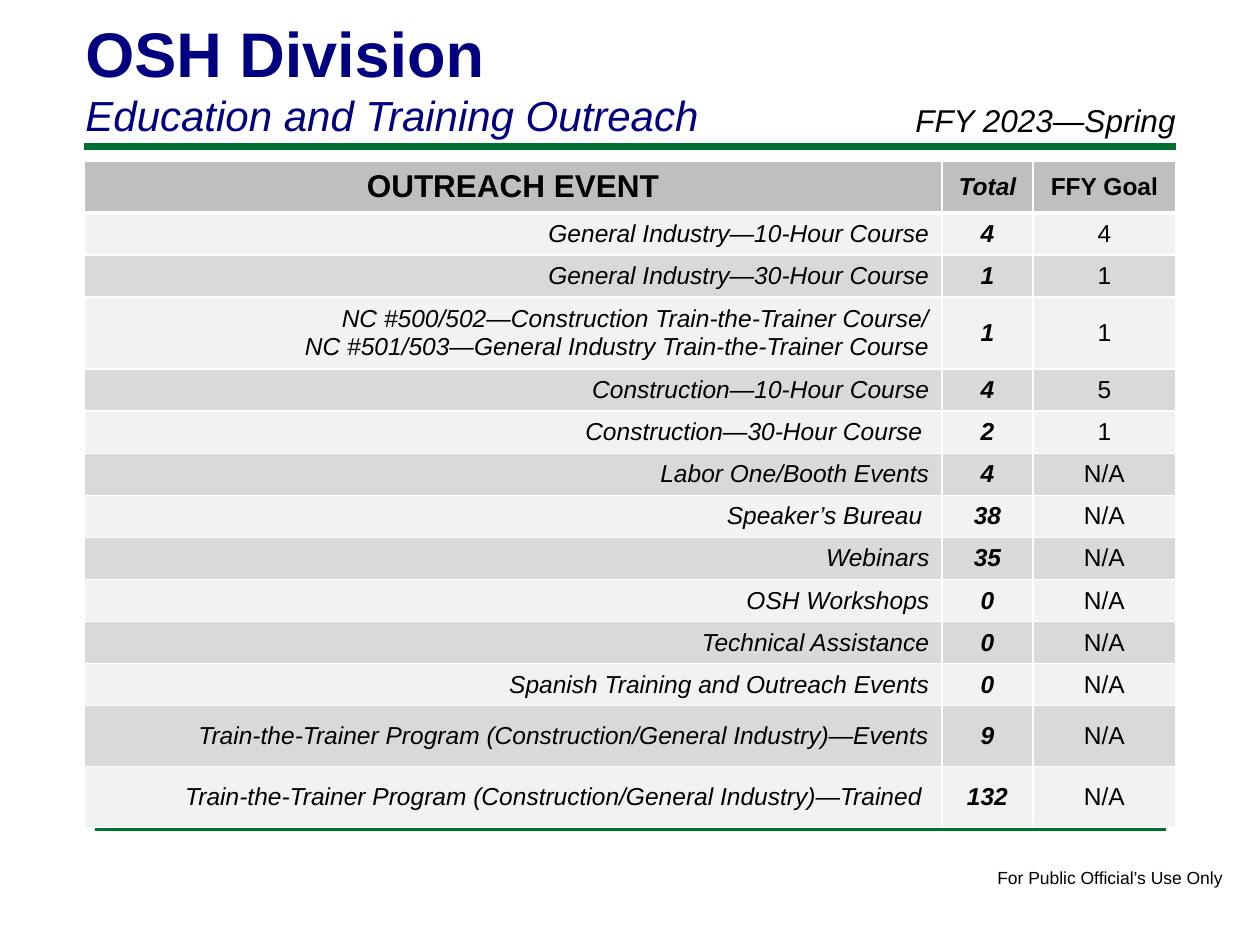
from pptx import Presentation
from pptx.dml.color import RGBColor
from pptx.enum.shapes import MSO_CONNECTOR as Connector
from pptx.enum.text import MSO_ANCHOR as Anchor, MSO_AUTO_SIZE as AutoSize, PP_ALIGN as Align
from pptx.oxml import parse_xml
from pptx.oxml.ns import nsdecls
from pptx.util import Emu, Pt

GREEN = RGBColor(0x00, 0x70, 0x30)
NAVY = RGBColor(0x00, 0x00, 0x80)
BLACK = RGBColor(0x00, 0x00, 0x00)
WHITE = RGBColor(0xFF, 0xFF, 0xFF)
HEADER_GRAY = RGBColor(0xBF, 0xBF, 0xBF)
BANDS = (RGBColor(0xF2, 0xF2, 0xF2), RGBColor(0xD9, 0xD9, 0xD9))

# Content: lines of text with their formats
TITLE = [
    ("OSH Division", dict(size=Pt(36), bold=True, color=NAVY)),
    ("Education and Training Outreach", dict(size=Pt(24), italic=True, color=NAVY)),
]
PERIOD = [("FFY 2023—Spring", dict(size=Pt(18), italic=True))]
FOOTER = [("For Public Official’s Use Only", dict(size=Pt(10)))]

HEADER = ("OUTREACH EVENT", "Total", "FFY Goal")
EVENTS = [
    ("General Industry—10-Hour Course", "4", "4"),
    ("General Industry—30-Hour Course", "1", "1"),
    ("NC #500/502—Construction Train-the-Trainer Course/\n"
     "NC #501/503—General Industry Train-the-Trainer Course", "1", "1"),
    ("Construction—10-Hour Course", "4", "5"),
    ("Construction—30-Hour Course ", "2", "1"),
    ("Labor One/Booth Events", "4", "N/A"),
    ("Speaker’s Bureau ", "38", "N/A"),
    ("Webinars", "35", "N/A"),
    ("OSH Workshops", "0", "N/A"),
    ("Technical Assistance", "0", "N/A"),
    ("Spanish Training and Outreach Events", "0", "N/A"),
    ("Train-the-Trainer Program (Construction/General Industry)—Events", "9", "N/A"),
    ("Train-the-Trainer Program (Construction/General Industry)—Trained ", "132", "N/A"),
]

# Formats by table column
HEADER_FORMATS = (
    dict(size=Pt(18), bold=True),
    dict(size=Pt(14), bold=True, italic=True),
    dict(size=Pt(14), bold=True),
)
BODY_FORMATS = (
    dict(size=Pt(14), italic=True),
    dict(size=Pt(14), bold=True, italic=True),
    dict(size=Pt(14)),
)
BODY_ALIGNS = (Align.RIGHT, Align.CENTER, Align.CENTER)

# Geometry in px
TABLE_LEFT, TABLE_TOP = 84, 161
COLUMN_WIDTHS = (858, 91, 143)
HEADER_HEIGHT, ROW_HEIGHT, TWO_LINE_HEIGHT, LAST_HEIGHT = 52, 42, 72, 61
RULES = [(84, 1176, 147, 4), (95, 1166, 829, 2)]


def px(length):
    return Emu(round(length * 914400 / 126))


def write(frame, lines, align=Align.LEFT):
    for index, (text, formats) in enumerate(lines):
        para = frame.paragraphs[0] if index == 0 else frame.add_paragraph()
        para.alignment = align
        span = para.add_run()
        span.text = text
        values = dict(name="Arial", bold=False, italic=False, color=BLACK) | formats
        span.font.color.rgb = values.pop("color")
        for name, value in values.items():
            setattr(span.font, name, value)


def add_text(page, place, lines, wrap=True):
    box = page.shapes.add_textbox(*map(px, place))
    box.text_frame.word_wrap = wrap
    box.text_frame.auto_size = AutoSize.SHAPE_TO_FIT_TEXT
    write(box.text_frame, lines)


def add_rule(page, left, right, y, weight):
    rule = page.shapes.add_connector(Connector.STRAIGHT, px(left), px(y), px(right), px(y))
    rule.line.color.rgb = GREEN
    rule.line.width = Pt(weight)
    rule._element.spPr.append(parse_xml(f"<a:effectLst {nsdecls('a')}/>"))


def set_borders(cell, top, bottom):
    properties = cell._tc.get_or_add_tcPr()
    for index, (side, weight) in enumerate(zip("LRTB", (1, 1, top, bottom))):
        properties.insert(index, parse_xml(
            f'<a:ln{side} {nsdecls("a")} w="{Pt(weight)}"><a:solidFill>'
            f'<a:srgbClr val="{WHITE}"/></a:solidFill></a:ln{side}>'))


def row_height(row):
    if row == 0:
        return HEADER_HEIGHT
    if row > len(EVENTS) - 2:
        return LAST_HEIGHT
    return TWO_LINE_HEIGHT if "\n" in EVENTS[row - 1][0] else ROW_HEIGHT


def add_event_table(page):
    rows = [HEADER, *EVENTS]
    heights = [row_height(row) for row in range(len(rows))]
    place = (TABLE_LEFT, TABLE_TOP, sum(COLUMN_WIDTHS), sum(heights))
    table = page.shapes.add_table(len(rows), len(HEADER), *map(px, place)).table
    for column, width in zip(table.columns, COLUMN_WIDTHS):
        column.width = px(width)
    for row, (texts, height) in enumerate(zip(rows, heights)):
        table.rows[row].height = px(height)
        for column, text in enumerate(texts):
            cell = table.cell(row, column)
            cell.vertical_anchor = Anchor.MIDDLE
            cell.fill.solid()
            cell.fill.fore_color.rgb = BANDS[(row - 1) % 2] if row else HEADER_GRAY
            set_borders(cell, top=3 if row == 1 else 1, bottom=1 if row else 3)
            formats = (BODY_FORMATS if row else HEADER_FORMATS)[column]
            align = BODY_ALIGNS[column] if row else Align.CENTER
            write(cell.text_frame, [(line, formats) for line in text.split("\n")], align)


def main():
    deck = Presentation()
    deck.slide_width, deck.slide_height = px(1260), px(945)
    page = deck.slides.add_slide(deck.slide_layouts[6])

    # Rules and footer
    for rule in RULES:
        add_rule(page, *rule)
    add_text(page, (985, 861, 253, 34), FOOTER, wrap=False)

    # Title, table and reporting period
    add_text(page, (73, 8, 1040, 140), TITLE)
    add_event_table(page)
    add_text(page, (903, 95, 315, 50), PERIOD)

    deck.save("out.pptx")


if __name__ == "__main__":
    main()
